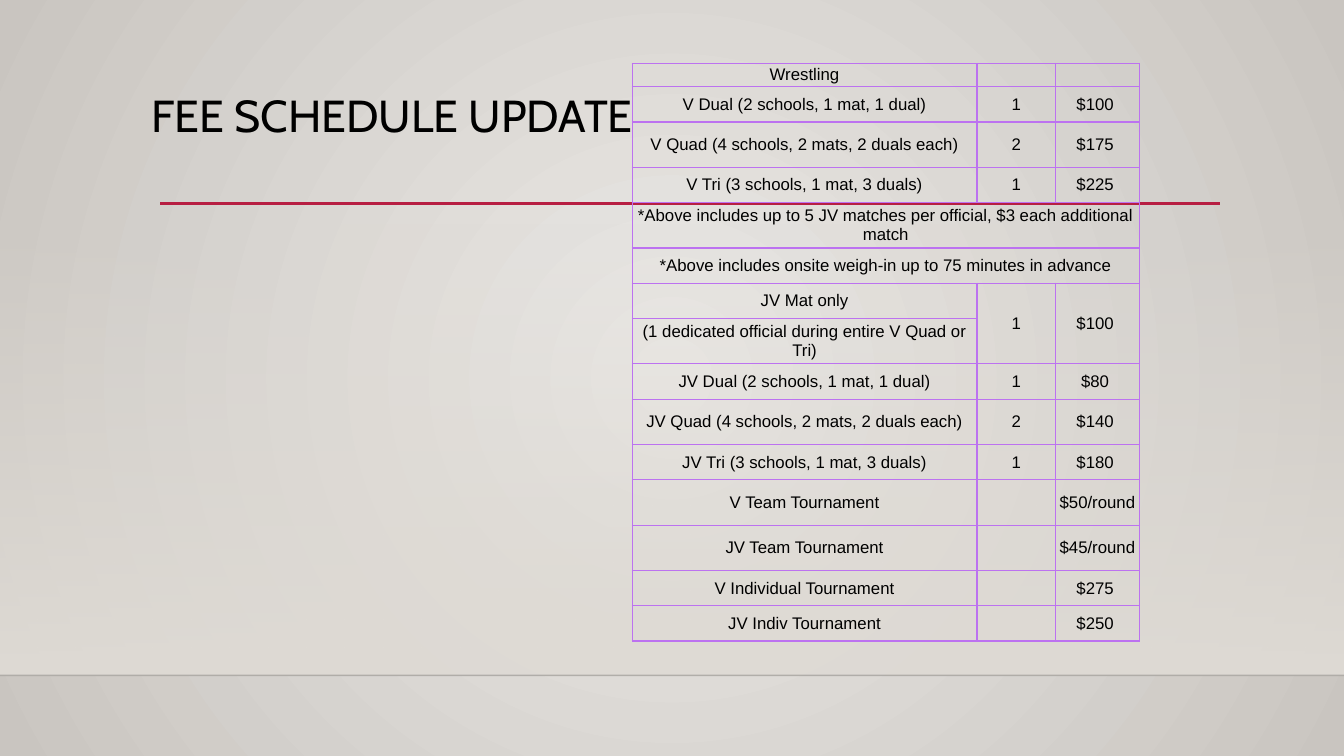
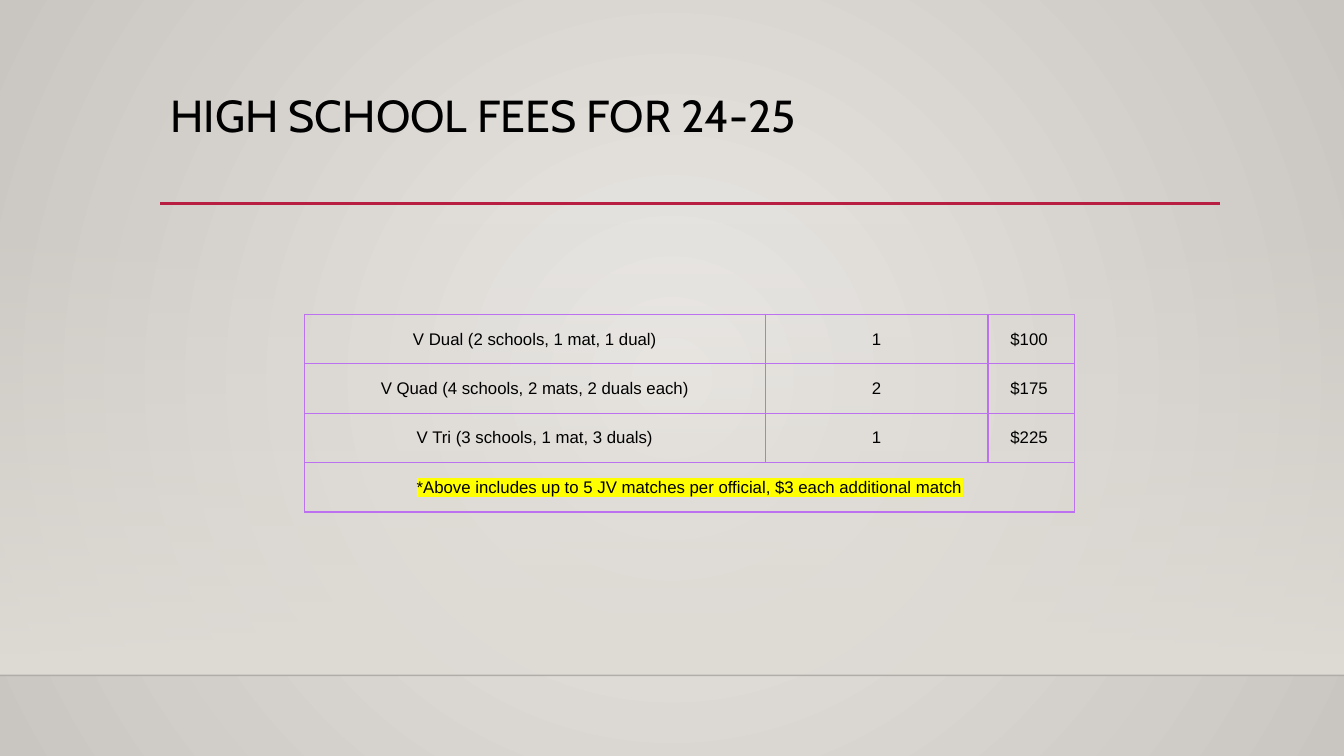
"""Build the two wrestling fee schedule slides."""
from lxml.etree import SubElement
from pptx import Presentation
from pptx.dml.color import RGBColor
from pptx.enum.shapes import MSO_CONNECTOR, MSO_SHAPE
from pptx.enum.text import MSO_ANCHOR, PP_ALIGN
from pptx.oxml import parse_xml
from pptx.oxml.ns import nsdecls, qn
from pptx.util import Inches, Pt

BLACK = RGBColor(0x00, 0x00, 0x00)
CENTER_LIGHT = RGBColor(0xEB, 0xE9, 0xE6)
EDGE_GRAY = RGBColor(0xC9, 0xC5, 0xC0)
WALL_BEIGE = RGBColor(0xDF, 0xDB, 0xD5)
RULE_RED = RGBColor(0xB7, 0x1E, 0x42)
BORDER_PURPLE = RGBColor(0xBC, 0x72, 0xF0)
YELLOW = RGBColor(0xFF, 0xFF, 0x00)

SLIDE_WIDTH, SLIDE_HEIGHT = 13.33, 7.5
FLOOR_TOP = 6.7
WALL_TOP = 2.21
TITLE_TOP = 0.88
TITLE_RIGHT = 12.09

TITLE_FONT = {"name": "Cabin", "size": Pt(32)}
CELL_FONT = {"name": "Arial", "size": Pt(12)}
CELL_FORMAT = {
    "margin_left": 0,
    "margin_right": 0,
    "margin_top": 0,
    "margin_bottom": 0,
    "vertical_anchor": MSO_ANCHOR.MIDDLE,
}

SHORT, TALL = 0.35, 0.45
MATCH_NOTE = "*Above includes up to 5 JV matches per official, $3 each additional match"
VARSITY_FEES = [
    ("V Dual (2 schools, 1 mat, 1 dual)", "1", "$100 "),
    ("V Quad (4 schools, 2 mats, 2 duals each)", "2", "$175 "),
    ("V Tri (3 schools, 1 mat, 3 duals)", "1", "$225 "),
]
FULL_SCHEDULE = [
    ("Wrestling", "", ""),
    *VARSITY_FEES,
    (MATCH_NOTE,),
    ("*Above includes onsite weigh-in up to 75 minutes in advance",),
    ("JV Mat only", "1", "$100 "),
    ("(1 dedicated official during entire V Quad or Tri)", None, None),
    ("JV Dual (2 schools, 1 mat, 1 dual)", "1", "$80 "),
    ("JV Quad (4 schools, 2 mats, 2 duals each)", "2", "$140 "),
    ("JV Tri (3 schools, 1 mat, 3 duals)", "1", "$180 "),
    ("V Team Tournament", "", "$50/round"),
    ("JV Team Tournament", "", "$45/round"),
    ("V Individual Tournament", "", "$275 "),
    ("JV Indiv Tournament", "", "$250 "),
]
FULL_HEIGHTS = [0.23, SHORT, TALL, SHORT, TALL, SHORT, SHORT, TALL,
                SHORT, TALL, SHORT, TALL, TALL, SHORT, SHORT]


def apply_format(target, values):
    for name, value in values.items():
        setattr(target, name, value)


def add_styled_run(paragraph, text, font_format):
    run = paragraph.add_run()
    run.text = text
    apply_format(run.font, font_format)
    run.font.color.rgb = BLACK
    return run


def set_gradient(properties, stops, direction):
    stop_xml = "".join(
        f'<a:gs pos="{position * 1000}"><a:srgbClr val="{color}">'
        f'<a:alpha val="{opacity * 1000}"/></a:srgbClr></a:gs>'
        for position, color, opacity in stops
    )
    gradient = parse_xml(
        f'<a:gradFill {nsdecls("a")} rotWithShape="1">'
        f"<a:gsLst>{stop_xml}</a:gsLst>{direction}</a:gradFill>"
    )
    properties.replace(properties.find(qn("a:solidFill")), gradient)


def paint_background(slide):
    slide.background.fill.solid()
    set_gradient(
        slide.element.find(".//" + qn("p:bgPr")),
        [(0, CENTER_LIGHT, 100), (100, EDGE_GRAY, 100)],
        '<a:path path="circle"><a:fillToRect l="50000" t="50000" '
        'r="50000" b="50000"/></a:path>',
    )


def add_wall(slide):
    wall = slide.shapes.add_shape(
        MSO_SHAPE.RECTANGLE, 0, Inches(WALL_TOP),
        Inches(SLIDE_WIDTH), Inches(FLOOR_TOP - WALL_TOP),
    )
    wall.shadow.inherit = False
    wall.line.fill.background()
    wall.fill.solid()
    set_gradient(
        wall.element.spPr,
        [(0, WALL_BEIGE, 0), (100, WALL_BEIGE, 100)],
        '<a:lin ang="5400000" scaled="0"/>',
    )


def add_rule(slide, left, right, top, color, width, opacity=100):
    rule = slide.shapes.add_connector(
        MSO_CONNECTOR.STRAIGHT, Inches(left), Inches(top), Inches(right), Inches(top)
    )
    rule.line.width = Pt(width)
    rule.line.color.rgb = color
    properties = rule.element.spPr
    tint = properties.find(".//" + qn("a:srgbClr"))
    SubElement(tint, qn("a:alpha"), val=str(opacity * 1000))
    SubElement(properties, qn("a:effectLst"))


def add_title(slide, text, left):
    title = slide.shapes.add_textbox(
        Inches(left), Inches(TITLE_TOP), Inches(TITLE_RIGHT - left), Inches(0.72)
    )
    title.text_frame.word_wrap = True
    heading = title.text_frame.paragraphs[0]
    heading.line_spacing = 0.9
    add_styled_run(heading, text, TITLE_FONT)


def add_borders(cell):
    properties = cell._tc.get_or_add_tcPr()
    for position, side in enumerate(("lnL", "lnR", "lnT", "lnB")):
        properties.insert(position, parse_xml(
            f'<a:{side} {nsdecls("a")} w="{Pt(1)}"><a:solidFill>'
            f'<a:srgbClr val="{BORDER_PURPLE}"/></a:solidFill></a:{side}>'
        ))


def highlight(run):
    marker = parse_xml(
        f'<a:highlight {nsdecls("a")}><a:srgbClr val="{YELLOW}"/></a:highlight>'
    )
    run.font._element.find(qn("a:latin")).addprevious(marker)


def fill_cell(cell, text, highlighted):
    apply_format(cell, CELL_FORMAT)
    paragraph = cell.text_frame.paragraphs[0]
    paragraph.alignment = PP_ALIGN.CENTER
    if text:
        run = add_styled_run(paragraph, text, CELL_FONT)
        if highlighted:
            highlight(run)
    else:
        size = str(int(CELL_FONT["size"].pt * 100))
        SubElement(paragraph._p, qn("a:endParaRPr"), sz=size)


def add_fee_table(slide, left, top, widths, heights, fees, highlight_notes=False):
    schedule = slide.shapes.add_table(
        len(fees), len(widths), Inches(left), Inches(top),
        Inches(sum(widths)), Inches(sum(heights)),
    ).table
    apply_format(schedule, {"first_row": False, "horz_banding": False})
    for column, width in zip(schedule.columns, widths):
        column.width = Inches(width)
    for row, height in zip(schedule.rows, heights):
        row.height = Inches(height)
    for cell in schedule.iter_cells():
        cell.fill.background()
        add_borders(cell)
    last = len(widths) - 1
    for row, entries in enumerate(fees):
        is_note = len(entries) == 1
        if is_note:
            schedule.cell(row, 0).merge(schedule.cell(row, last))
        for column, text in enumerate(entries):
            cell = schedule.cell(row, column)
            if text is None:
                schedule.cell(row - 1, column).merge(cell)
            else:
                fill_cell(cell, text, is_note and highlight_notes)


def add_fee_slide(deck, title, title_left):
    slide = deck.slides.add_slide(deck.slide_layouts[6])
    paint_background(slide)
    add_wall(slide)
    add_rule(slide, 0, SLIDE_WIDTH, FLOOR_TOP, BLACK, 1, opacity=20)
    add_rule(slide, 1.59, 12.1, 2.02, RULE_RED, 2.5)
    add_title(slide, title, title_left)
    return slide


def main():
    deck = Presentation()
    deck.slide_width = Inches(SLIDE_WIDTH)
    deck.slide_height = Inches(SLIDE_HEIGHT)

    update = add_fee_slide(deck, "FEE SCHEDULE UPDATE", 1.4)
    add_fee_table(update, 6.27, 0.63, [3.42, 0.78, 0.83], FULL_HEIGHTS, FULL_SCHEDULE)

    high_school = add_fee_slide(deck, "HIGH SCHOOL FEES FOR 24-25", 1.59)
    add_fee_table(
        high_school, 3.02, 3.12, [4.57, 2.21, 0.86], [0.49] * 4,
        [*VARSITY_FEES, (MATCH_NOTE,)], highlight_notes=True,
    )
    deck.save("out.pptx")


if __name__ == "__main__":
    main()
